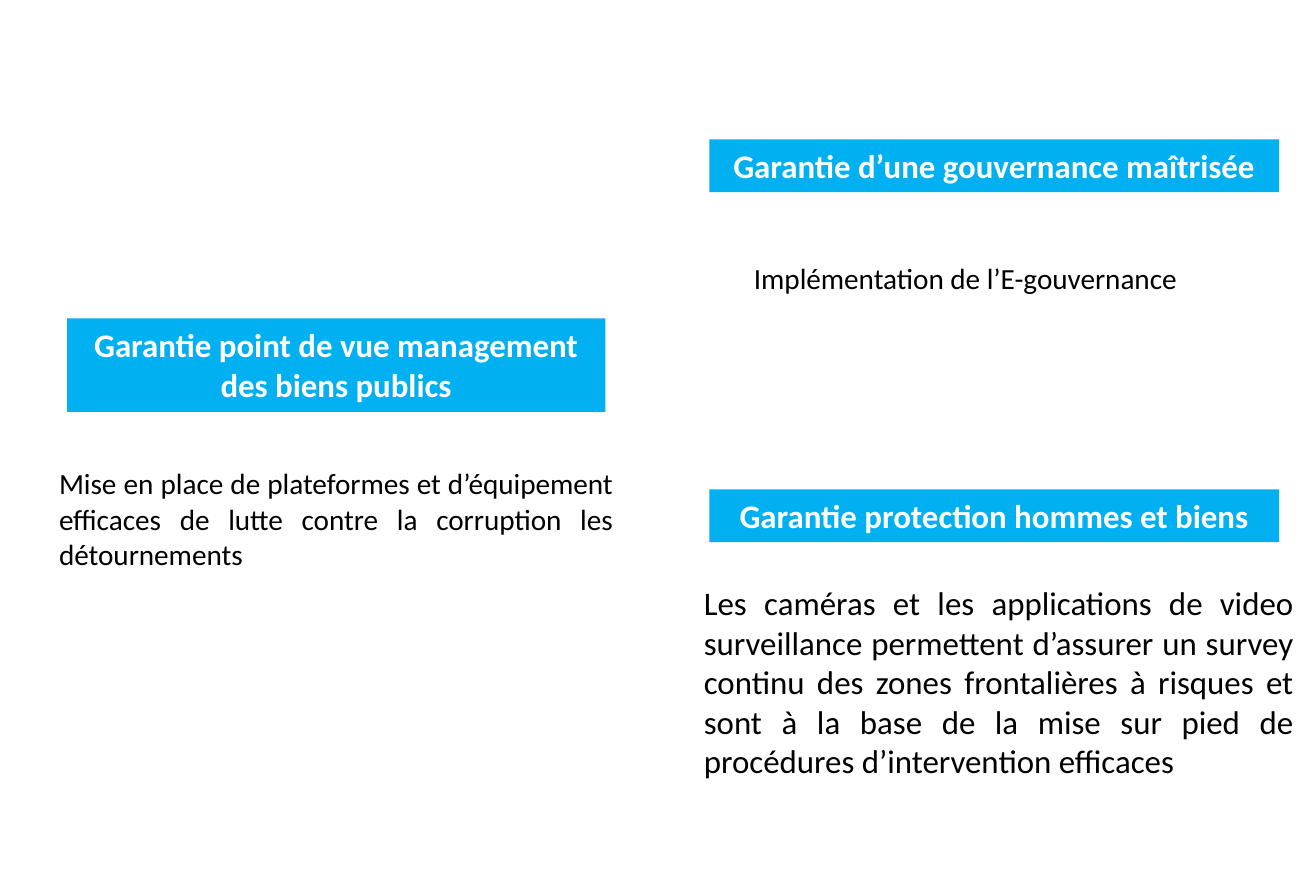
from dataclasses import dataclass

from pptx import Presentation
from pptx import util as u
from pptx.dml.color import RGBColor
from pptx.enum import shapes, text

PX = 9144
SLIDE_W, SLIDE_H = u.Emu(9144000), u.Emu(6100763)
FONT = "Calibri"
COLORS = {"banner": "00B0F0", "light": "FFFFFF", "dark": "000000"}


@dataclass(frozen=True)
class Block:
    x: int
    y: int
    w: int
    h: int
    words: str
    size: int = 18


BANNERS = [
    Block(51, 242, 409, 71, "Garantie point de vue management des biens publics"),
    Block(539, 106, 433, 40, "Garantie d’une gouvernance maîtrisée"),
    Block(539, 372, 433, 40, "Garantie protection hommes et biens"),
]
BODIES = [
    Block(35, 349, 441, 91,
          "Mise en place de plateformes et d’équipement efficaces "
          "de lutte contre la corruption les détournements", 16),
    Block(563, 193, 488, 37, "Implémentation de l’E-gouvernance", 16),
    Block(525, 438, 468, 162,
          "Les caméras et les applications de video surveillance permettent "
          "d’assurer un survey continu des zones frontalières à risques et sont "
          "à la base de la mise sur pied de procédures d’intervention efficaces"),
]


def px(*values: int) -> list[u.Emu]:
    return [u.Emu(v * PX) for v in values]


def rgb(name: str) -> RGBColor:
    return RGBColor.from_string(COLORS[name])


def write(sp, block: Block, align: text.PP_ALIGN, color: str, bold: bool) -> None:
    tf = sp.text_frame
    tf.word_wrap = True
    tf.auto_size = text.MSO_AUTO_SIZE.SHAPE_TO_FIT_TEXT
    tf.vertical_anchor = text.MSO_ANCHOR.TOP
    p = tf.paragraphs[0]
    p.alignment = align
    r = p.add_run()
    r.text = block.words
    r.font.name = FONT
    r.font.size = u.Pt(block.size)
    r.font.bold = bold
    r.font.color.rgb = rgb(color)


def add_banner(s, block: Block) -> None:
    sp = s.shapes.add_shape(
        shapes.MSO_SHAPE.RECTANGLE, *px(block.x, block.y, block.w, block.h))
    sp.shadow.inherit = False
    sp.fill.solid()
    sp.fill.fore_color.rgb = rgb("banner")
    sp.line.fill.background()
    write(sp, block, text.PP_ALIGN.CENTER, "light", True)


def add_body(s, block: Block) -> None:
    sp = s.shapes.add_textbox(*px(block.x, block.y, block.w, block.h))
    write(sp, block, text.PP_ALIGN.JUSTIFY, "dark", False)


def main() -> None:
    prs = Presentation()
    prs.slide_width, prs.slide_height = SLIDE_W, SLIDE_H
    s = prs.slides.add_slide(prs.slide_layouts[6])
    for block in BANNERS:
        add_banner(s, block)
    for block in BODIES:
        add_body(s, block)
    prs.save("out.pptx")


if __name__ == "__main__":
    main()
